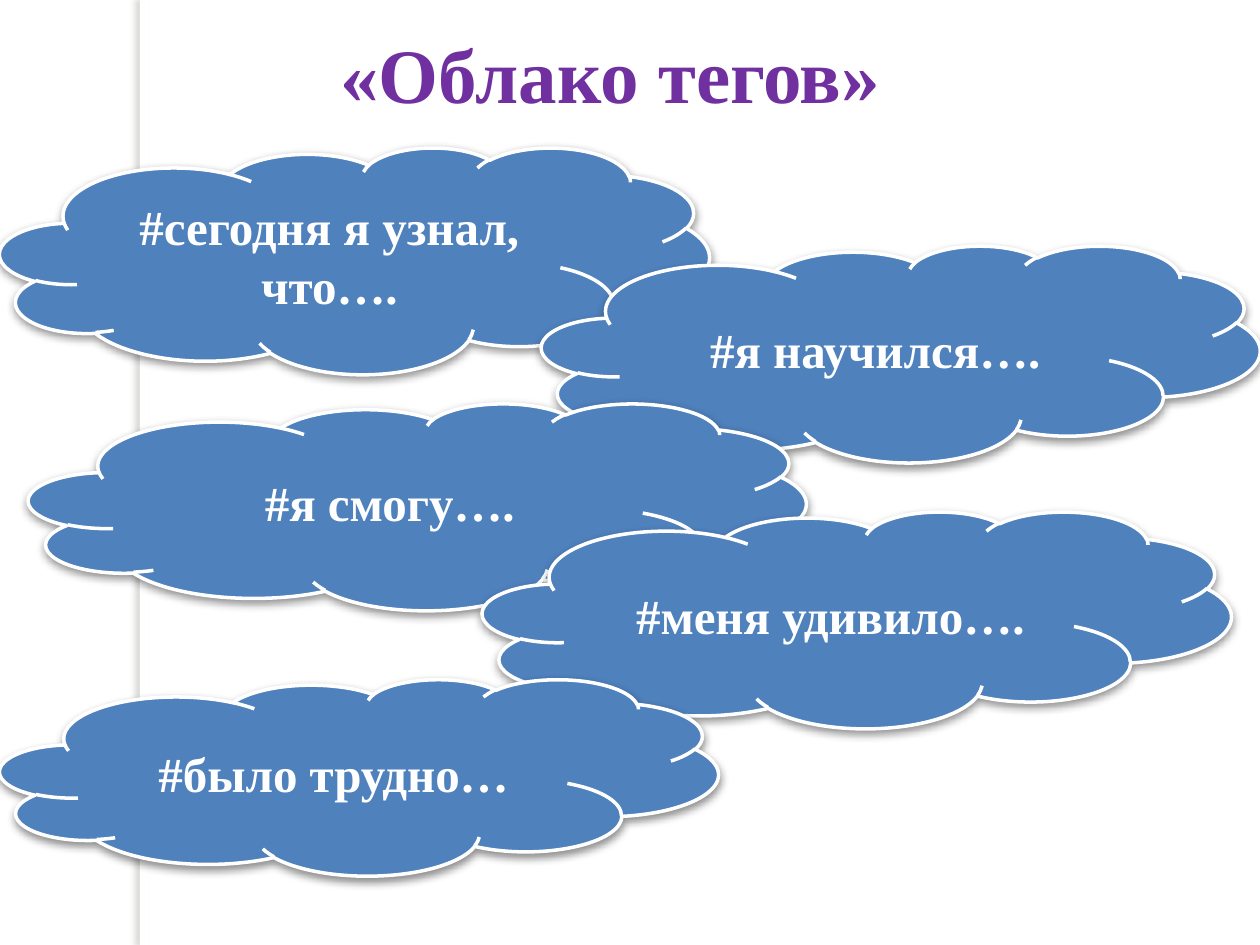
from dataclasses import dataclass

from lxml.etree import SubElement
from pptx import Presentation
from pptx.dml.color import RGBColor
from pptx.enum.shapes import MSO_SHAPE
from pptx.enum.text import MSO_ANCHOR, MSO_AUTO_SIZE, PP_ALIGN
from pptx.oxml.ns import qn
from pptx.util import Cm, Pt

# Content: wording, then left, top, width, height in cm
TITLE = ("«Облако тегов»", (6.55, 0.41, 11.51, 2.13))
CLOUDS = [
    ("#сегодня я узнал, что….", (0, 2.97, 14.3, 4.57)),
    ("#я научился….", (10.92, 4.95, 14.48, 4.37)),
    ("#я смогу….", (0.58, 8.13, 15.67, 4.17)),
    ("#меня удивило….", (9.73, 10.31, 15.09, 4.37)),
    ("#было трудно…", (0, 13.69, 14.48, 3.96)),
]
SIDE_STRIP = (2.82, 0, 0.2, 19.05)


@dataclass(frozen=True)
class Shadow:
    color: str
    opacity: int  # percent
    blur: int  # points
    distance: int  # points
    angle: int  # degrees


@dataclass(frozen=True)
class Theme:
    font: str = "Times New Roman"
    title_size: int = 44
    cloud_size: int = 28
    line_width: int = 2
    title: str = "7030A0"
    cloud: str = "4F81BD"
    white: str = "FFFFFF"
    strip_shadow: Shadow = Shadow("77756F", 25, 3, 3, 180)
    cloud_shadow: Shadow = Shadow("000000", 43, 5, 2, 90)


THEME = Theme()


def write(shape, text, size, color):
    frame = shape.text_frame
    frame.text = text
    para = frame.paragraphs[0]
    para.alignment = PP_ALIGN.CENTER
    for span in para.runs:
        span.font.name = THEME.font
        span.font.size = Pt(size)
        span.font.bold = True
        span.font.color.rgb = RGBColor.from_string(color)


def cast_shadow(shape, shadow):
    shape.shadow.inherit = False
    effects = shape._element.spPr.find(qn("a:effectLst"))
    outer = SubElement(
        effects, qn("a:outerShdw"),
        blurRad=str(Pt(shadow.blur)), dist=str(Pt(shadow.distance)),
        dir=str(shadow.angle * 60000), rotWithShape="0",
    )
    color = SubElement(outer, qn("a:srgbClr"), val=shadow.color)
    SubElement(color, qn("a:alpha"), val=str(shadow.opacity * 1000))


def add_filled(slide, kind, place, fill, shadow):
    shape = slide.shapes.add_shape(kind, *map(Cm, place))
    shape.fill.solid()
    shape.fill.fore_color.rgb = RGBColor.from_string(fill)
    shape.line.fill.background()
    cast_shadow(shape, shadow)
    return shape


def add_title(slide, text, place):
    title = slide.shapes.title
    title.left, title.top, title.width, title.height = map(Cm, place)
    write(title, text, THEME.title_size, THEME.title)
    title.text_frame.word_wrap = False
    title.text_frame.auto_size = MSO_AUTO_SIZE.SHAPE_TO_FIT_TEXT


def add_cloud(slide, text, place):
    cloud = add_filled(slide, MSO_SHAPE.CLOUD, place, THEME.cloud, THEME.cloud_shadow)
    cloud.line.color.rgb = RGBColor.from_string(THEME.white)
    cloud.line.width = Pt(THEME.line_width)
    write(cloud, text, THEME.cloud_size, THEME.white)
    cloud.text_frame.word_wrap = True
    cloud.text_frame.vertical_anchor = MSO_ANCHOR.MIDDLE


def main():
    deck = Presentation()
    deck.slide_width, deck.slide_height = Cm(25.4), Cm(19.05)
    page = deck.slides.add_slide(deck.slide_layouts.get_by_name("Title Only"))

    # Side strip behind everything, then title and clouds
    strip = add_filled(page, MSO_SHAPE.RECTANGLE, SIDE_STRIP, THEME.white, THEME.strip_shadow)
    page.shapes.title._element.addprevious(strip._element)
    add_title(page, *TITLE)
    for text, place in CLOUDS:
        add_cloud(page, text, place)

    deck.save("out.pptx")


if __name__ == "__main__":
    main()
